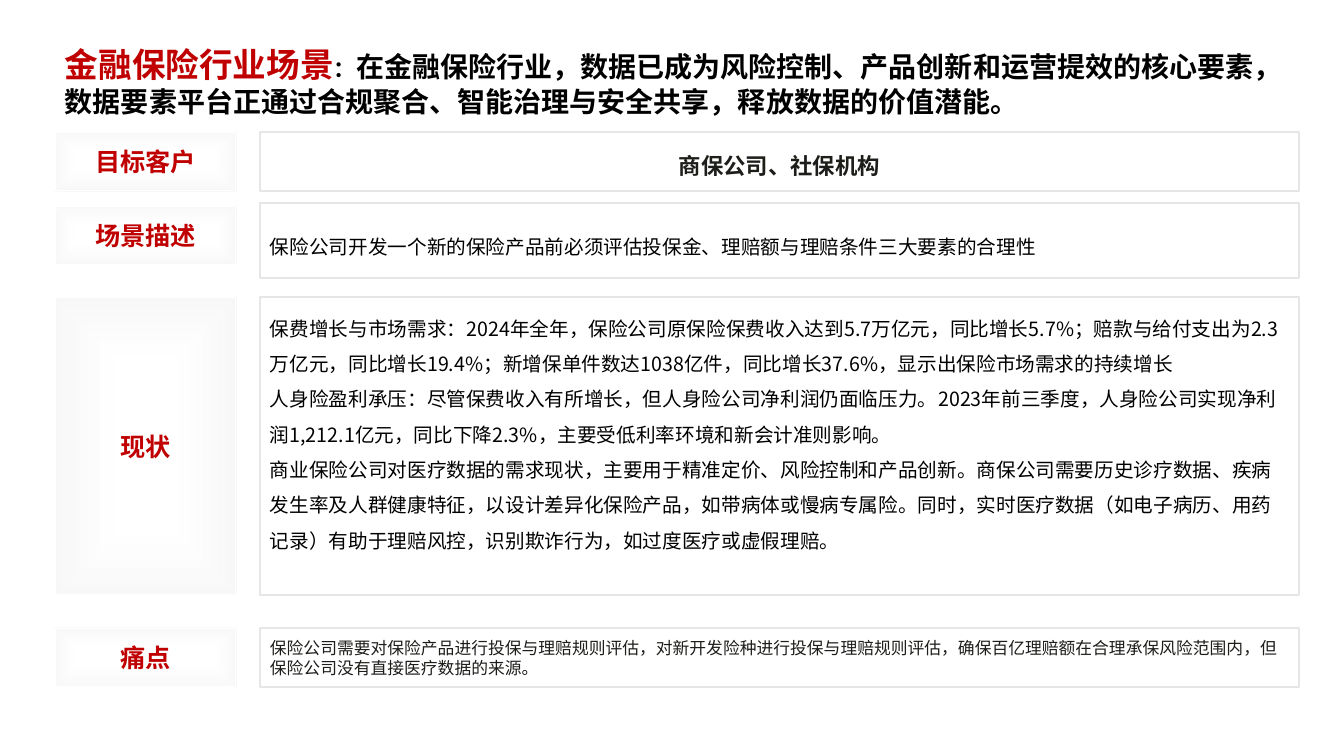
from pptx import Presentation
from pptx.dml.color import RGBColor
from pptx.enum.shapes import MSO_SHAPE
from pptx.enum.text import MSO_ANCHOR, PP_ALIGN
from pptx.oxml import parse_xml
from pptx.oxml.ns import nsdecls, qn
from pptx.util import Pt

PX = 914400 / 100.8
FONT = "Noto Sans CJK SC"
RED = RGBColor(0xC0, 0x00, 0x00)
BLACK = RGBColor(0x00, 0x00, 0x00)
INK = RGBColor(0x1D, 0x1D, 0x1A)
GRAY = RGBColor(0xE7, 0xE6, 0xE6)
WHITE = RGBColor(0xFF, 0xFF, 0xFF)
GLOW = f"""<a:gradFill {nsdecls("a")} rotWithShape="1"><a:gsLst>
<a:gs pos="35000"><a:srgbClr val="F1F0F0"><a:alpha val="0"/></a:srgbClr></a:gs>
<a:gs pos="95000"><a:srgbClr val="ECEBEB"><a:alpha val="32000"/></a:srgbClr></a:gs>
</a:gsLst><a:path path="shape">
<a:fillToRect l="50000" t="50000" r="50000" b="50000"/></a:path></a:gradFill>"""

TITLE = [
    ("金融保险行业场景", 24, RED),
    ("：", 16, BLACK),
    ("在金融保险行业，数据已成为风险控制、产品创新和运营提效的核心要素，"
     "数据要素平台正通过合规聚合、智能治理与安全共享，释放数据的价值潜能。", 20, BLACK),
]
CLIENT = ["商保公司、社保机构"]
SCENE = ["保险公司开发一个新的保险产品前必须评估投保金、理赔额与理赔条件三大要素的合理性"]
STATUS = [
    "保费增长与市场需求：2024年全年，保险公司原保险保费收入达到5.7万亿元，同比增长5.7%；"
    "赔款与给付支出为2.3万亿元，同比增长19.4%；新增保单件数达1038亿件，同比增长37.6%，"
    "显示出保险市场需求的持续增长",
    "人身险盈利承压：尽管保费收入有所增长，但人身险公司净利润仍面临压力。2023年前三季度，"
    "人身险公司实现净利润1,212.1亿元，同比下降2.3%，主要受低利率环境和新会计准则影响。",
    "商业保险公司对医疗数据的需求现状，主要用于精准定价、风险控制和产品创新。"
    "商保公司需要历史诊疗数据、疾病发生率及人群健康特征，以设计差异化保险产品，"
    "如带病体或慢病专属险。同时，实时医疗数据（如电子病历、用药记录）有助于理赔风控，"
    "识别欺诈行为，如过度医疗或虚假理赔。",
]
PAIN = ["保险公司需要对保险产品进行投保与理赔规则评估，对新开发险种进行投保与理赔规则评估，"
        "确保百亿理赔额在合理承保风险范围内，但保险公司没有直接医疗数据的来源。"]


def px(num):
    """Turn pixels into EMU."""
    return round(num * PX)


def add_run(para, text, size, color, bold=False):
    """Add one styled run to a paragraph."""
    run = para.add_run()
    run.text = text
    font = run.font
    font.name, font.size, font.bold = FONT, Pt(size), bold
    font.color.rgb = color
    east = parse_xml(f'<a:ea {nsdecls("a")} typeface="{FONT}"/>')
    run._r.rPr.find(qn("a:latin")).addnext(east)


def add_rect(slide, left, top, width, height, edge, weight):
    """Add a white outlined box with its text in the middle."""
    rect = slide.shapes.add_shape(
        MSO_SHAPE.RECTANGLE, px(left), px(top), px(width), px(height))
    rect.shadow.inherit = False
    rect.fill.solid()
    rect.fill.fore_color.rgb = WHITE
    rect.line.color.rgb = edge
    rect.line.width = Pt(weight)
    rect.text_frame.word_wrap = True
    rect.text_frame.vertical_anchor = MSO_ANCHOR.MIDDLE
    return rect


def add_label(slide, text, top, height):
    """Add a row label with a soft glow inside its edge."""
    rect = add_rect(slide, 55, top, 181, height, WHITE, 0.75)
    props = rect._element.spPr
    props.replace(props.find(qn("a:solidFill")), parse_xml(GLOW))
    para = rect.text_frame.paragraphs[0]
    para.alignment = PP_ALIGN.CENTER
    add_run(para, text, 18, RED, True)


def add_body(slide, texts, top, height, size, color, space,
             align=PP_ALIGN.LEFT, bold=False, foot=5):
    """Add the content box of a row, one paragraph per text."""
    frame = add_rect(slide, 260, top, 1039, height, GRAY, 1).text_frame
    frame.margin_bottom = px(foot)
    for i, text in enumerate(texts):
        para = frame.add_paragraph() if i else frame.paragraphs[0]
        para.alignment = align
        para.line_spacing = space
        add_run(para, text, size, color, bold)


def add_title(slide):
    """Add the headline over both columns."""
    box = slide.shapes.add_textbox(px(55), px(39), px(1244), px(85))
    box.text_frame.word_wrap = True
    for text, size, color in TITLE:
        add_run(box.text_frame.paragraphs[0], text, size, color, True)


def main():
    """Build the slide and save it."""
    deck = Presentation()
    deck.slide_width, deck.slide_height = px(1344), px(756)
    slide = deck.slides.add_slide(deck.slide_layouts[6])
    add_label(slide, "目标客户", 132, 59)
    add_body(slide, CLIENT, 132, 59, 16, INK, 1.3, PP_ALIGN.CENTER, True)
    add_label(slide, "场景描述", 206, 59)
    add_body(slide, SCENE, 203, 75, 14, BLACK, 1.5)
    add_label(slide, "现状", 297, 298)
    add_body(slide, STATUS, 297, 298, 14, BLACK, 1.5, foot=40)
    add_label(slide, "痛点", 628, 59)
    add_body(slide, PAIN, 628, 59, 12, INK, 1.0)
    add_title(slide)
    deck.save("out.pptx")


if __name__ == "__main__":
    main()
